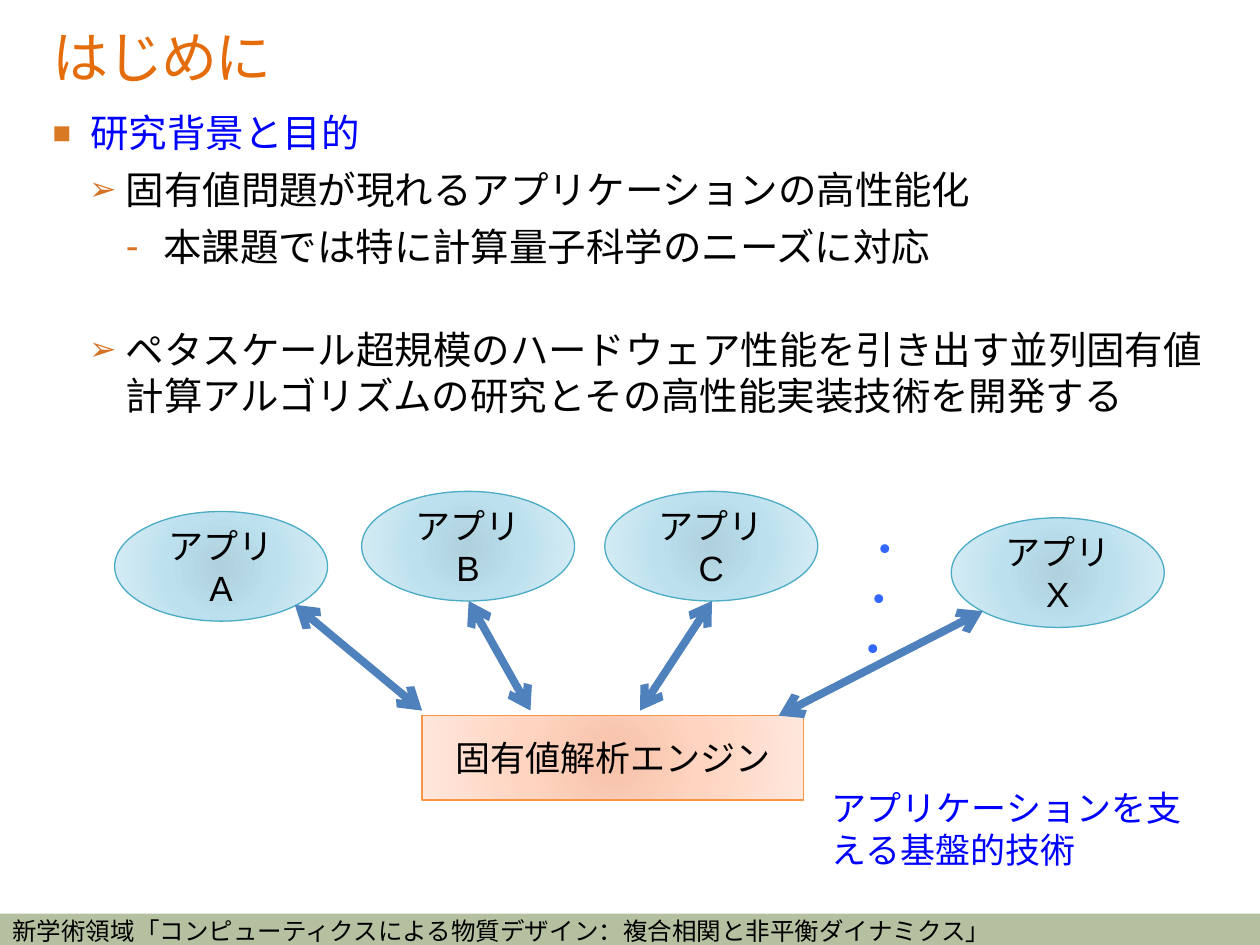
from dataclasses import dataclass
from lxml import etree
from pptx import Presentation
from pptx import util as u
from pptx.dml.color import RGBColor
from pptx.enum import shapes, text
from pptx.oxml import parse_xml
from pptx.oxml.ns import nsdecls, qn

COLUMNS, ROWS = 100, 75
WIDTH, HEIGHT = u.Inches(10), u.Inches(7.5)


@dataclass(frozen=True)
class Theme:
    font: str = "Arial"
    footer_font: str = "Noto Sans CJK JP"
    title: str = "E46C0A"
    accent: str = "0000FF"
    ink: str = "000000"
    dots: str = "3366FF"
    bullet: str = "D77326"
    footer: str = "B4C09F"
    arrow: str = "4F81BD"
    app_line: str = "4BACC6"
    app_fill: tuple = ("AFD0DD", "BCE0EE", "DAEEF6")
    engine_line: str = "F79646"
    engine_fill: tuple = ("F6C2AA", "FFD4C0", "FFE7DD")
    title_size: int = 32
    dots_size: int = 24
    body_size: int = 22
    label_size: int = 20
    footer_size: int = 14


THEME = Theme()


def grid(column, row):
    return round(WIDTH * column / COLUMNS), round(HEIGHT * row / ROWS)


def area(box):
    return *grid(*box[:2]), *grid(*box[2:])


def write(paragraph, words, size, color=THEME.ink, font=THEME.font, align=None, spacing=None):
    paragraph.text = words
    if align is not None:
        paragraph.alignment = align
    for run in paragraph.runs:
        run.font.size = u.Pt(size)
        run.font.name = font
        run.font.color.rgb = RGBColor.from_string(color)
        properties = run.font._element
        etree.SubElement(properties, qn("a:ea")).set("typeface", font)
        if spacing is not None:
            properties.set("spc", str(spacing))


def text_frame(slide, box, wrap=True):
    frame = slide.shapes.add_textbox(*area(box)).text_frame
    frame.word_wrap = wrap
    return frame


def set_bullet(paragraph, mark, color, percent, left, hang):
    properties = paragraph._p.get_or_add_pPr()
    properties.set("marL", str(u.Inches(left)))
    properties.set("indent", str(-u.Inches(hang)))
    color_node = etree.SubElement(properties, qn("a:buClr"))
    etree.SubElement(color_node, qn("a:srgbClr")).set("val", color)
    etree.SubElement(properties, qn("a:buSzPct")).set("val", str(percent * 1000))
    etree.SubElement(properties, qn("a:buFont")).set("typeface", THEME.font)
    etree.SubElement(properties, qn("a:buChar")).set("char", mark)


def fill_radial(shape, colors):
    stops = "".join(
        f'<a:gs pos="{share * 1000}"><a:srgbClr val="{color}"/></a:gs>'
        for share, color in zip((0, 45, 100), colors)
    )
    gradient = parse_xml(
        f'<a:gradFill {nsdecls("a")} rotWithShape="1"><a:gsLst>{stops}</a:gsLst>'
        '<a:path path="circle"><a:fillToRect l="50000" t="50000" r="50000" b="50000"/></a:path>'
        "</a:gradFill>"
    )
    shape._element.spPr.find(qn("a:prstGeom")).addnext(gradient)


def add_node(slide, box, kind, words, colors, line):
    node = slide.shapes.add_shape(kind, *area(box))
    node.shadow.inherit = False
    node.line.color.rgb = RGBColor.from_string(line)
    node.line.width = u.Pt(0.75)
    fill_radial(node, colors)
    node.text_frame.word_wrap = True
    node.text_frame.vertical_anchor = text.MSO_ANCHOR.MIDDLE
    write(node.text_frame.paragraphs[0], words, THEME.label_size, align=text.PP_ALIGN.CENTER)


def add_arrow(slide, start, end):
    arrow = slide.shapes.add_connector(shapes.MSO_CONNECTOR.STRAIGHT, *grid(*start), *grid(*end))
    arrow.line.color.rgb = RGBColor.from_string(THEME.arrow)
    arrow.line.width = u.Pt(4.5)
    stroke = arrow.line._get_or_add_ln()
    for tip in ("a:headEnd", "a:tailEnd"):
        etree.SubElement(stroke, qn(tip)).set("type", "arrow")
    etree.SubElement(arrow._element.spPr, qn("a:effectLst"))


def add_footer(slide, box):
    left, top, width, height = box
    bar = slide.shapes.add_shape(shapes.MSO_SHAPE.RECTANGLE, *area(box))
    bar.shadow.inherit = False
    bar.fill.solid()
    bar.fill.fore_color.rgb = RGBColor.from_string(THEME.footer)
    bar.line.fill.background()
    credit = text_frame(slide, (left, top - 0.3, width, height + 0.3))
    write(credit.paragraphs[0], "新学術領域「コンピューティクスによる物質デザイン：複合相関と非平衡ダイナミクス」",
          THEME.footer_size, font=THEME.footer_font)


def add_title(slide, box):
    heading = text_frame(slide, box)
    heading.vertical_anchor = text.MSO_ANCHOR.MIDDLE
    write(heading.paragraphs[0], "はじめに", THEME.title_size, THEME.title, spacing=-100)


def add_outline(slide, box):
    levels = (("■", "DA7923", 80, 0.3, 0.3),
              ("➢", THEME.bullet, 85, 0.58, 0.29),
              ("-", THEME.bullet, 100, 0.88, 0.3))
    items = ((0, "研究背景と目的", THEME.accent, 3),
             (1, "固有値問題が現れるアプリケーションの高性能化", THEME.ink, 3),
             (2, "本課題では特に計算量子科学のニーズに対応", THEME.ink, 29.4),
             (1, "ペタスケール超規模のハードウェア性能を引き出す並列固有値\v"
                 "計算アルゴリズムの研究とその高性能実装技術を開発する", THEME.ink, 3))
    outline = text_frame(slide, box)
    for index, (level, words, color, after) in enumerate(items):
        item = outline.add_paragraph() if index else outline.paragraphs[0]
        write(item, words, THEME.body_size, color)
        item.level = level
        item.space_before, item.space_after = u.Pt(3), u.Pt(after)
        set_bullet(item, *levels[level])


def add_diagram(slide, box):
    left, top, width, height = box
    apps = (("A", 0, 1.6), ("B", 19.6, 0), ("C", 38.9, 0), ("X", 66.4, 2.1))
    for letter, column, row in apps:
        add_node(slide, (left + column, top + row, 16.9, 8.7), shapes.MSO_SHAPE.OVAL,
                 f"アプリ {letter}", THEME.app_fill, THEME.app_line)
    add_node(slide, (left + 24.4, top + 17.8, 30.3, 6.7), shapes.MSO_SHAPE.RECTANGLE,
             "固有値解析エンジン", THEME.engine_fill, THEME.engine_line)

    links = (((14.3, 9), (24.4, 17.4)), ((28.1, 8.7), (33, 17.4)),
             ((47.4, 8.7), (41.7, 17.4)), ((68.9, 9.5), (52.7, 17.8)))
    for start, end in links:
        add_arrow(slide, *((left + column, top + row) for column, row in (start, end)))

    more = slide.shapes.add_textbox(*area((left + 58.5, top + 2.1, 7.1, 5)))
    more.rotation = 6.9
    write(more.text_frame.paragraphs[0], "・\v・\v・", THEME.dots_size, THEME.dots)

    caption = text_frame(slide, (left + 55.9, top + 22.9, width - 55.9, height - 22.9))
    write(caption.paragraphs[0], "アプリケーションを支える基盤的技術", THEME.label_size, THEME.accent)


def main():
    deck = Presentation()
    deck.slide_width, deck.slide_height = WIDTH, HEIGHT
    slide = deck.slides.add_slide(deck.slide_layouts[6])
    add_footer(slide, (0, 72.5, COLUMNS, 2.5))
    add_title(slide, (3.2, 0, 94.3, 8.9))
    add_outline(slide, (3.2, 8.2, 94.3, 62.4))
    add_diagram(slide, (9.1, 39, 87.5, 30.6))
    deck.save("out.pptx")


if __name__ == "__main__":
    main()
